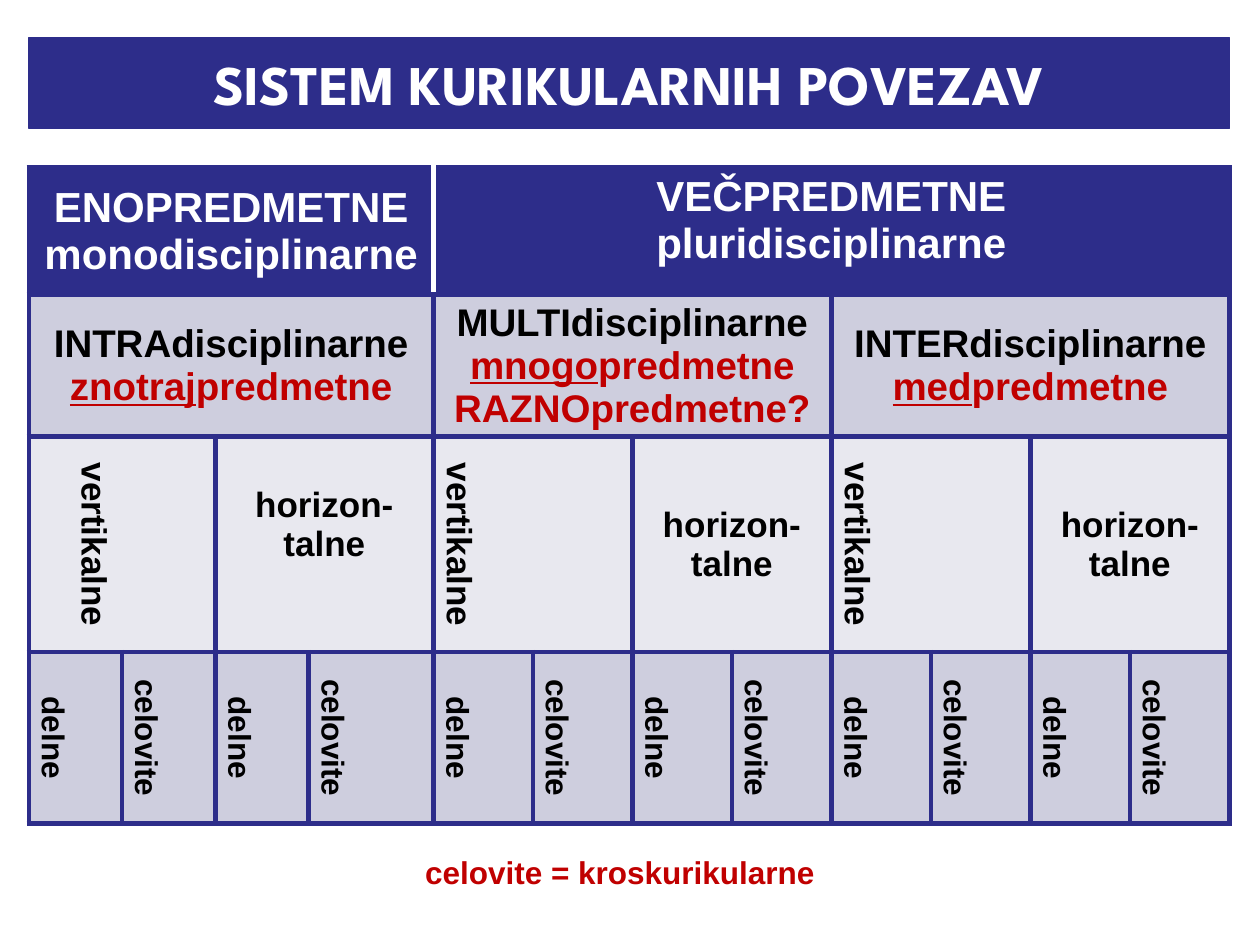
from lxml import etree
from pptx import Presentation
from pptx import util as u
from pptx.dml.color import RGBColor
from pptx.enum import text
from pptx.oxml import ns

NAVY = RGBColor(0x2D, 0x2D, 0x8A)
WHITE = RGBColor(0xFF, 0xFF, 0xFF)
BLACK = RGBColor(0, 0, 0)
RED = RGBColor(0xC0, 0, 0)
LILAC = RGBColor(0xCE, 0xCE, 0xDE)
PALE = RGBColor(0xE8, 0xE8, 0xEF)

LEFT, WIDTH = 0.23, 9.53
COLUMNS = [0.74] * 3 + [0.99] + [0.79] * 8
ROWS = [1.01, 0.57, 1.64, 1.36]
DISCIPLINES = [
    ("INTRAdisciplinarne", [("znotraj", "predmetne")]),
    ("MULTIdisciplinarne", [("mnogo", "predmetne"), ("", "RAZNOpredmetne?")]),
    ("INTERdisciplinarne", [("med", "predmetne")]),
]


def inches(*lengths):
    """Convert lengths in inches."""
    return [u.Inches(length) for length in lengths]


def add_span(para, words, size, color, font="Arial", underline=None):
    """Add a bold run to a centred paragraph."""
    para.alignment = text.PP_ALIGN.CENTER
    span = para.add_run()
    span.text = words
    span.font.name = font
    span.font.size = u.Pt(size)
    span.font.bold = True
    span.font.underline = underline
    span.font.color.rgb = color


def add_title(page, words):
    """Turn the title placeholder into a filled banner."""
    title = page.shapes.title
    title.left, title.top, title.width, title.height = inches(LEFT, 0.3, WIDTH, 0.72)
    title.fill.solid()
    title.fill.fore_color.rgb = NAVY
    title.line.color.rgb = NAVY
    title.line.width = u.Pt(0.75)
    title.text_frame.vertical_anchor = text.MSO_ANCHOR.MIDDLE
    add_span(title.text_frame.paragraphs[0], words, 32, WHITE, "League Spartan")


def add_border(cell, side, color):
    """Draw one 3 pt cell edge."""
    edge = etree.SubElement(cell._tc.get_or_add_tcPr(), ns.qn(f"a:ln{side}"), w=str(u.Pt(3)))
    fill = etree.SubElement(edge, ns.qn("a:solidFill"))
    etree.SubElement(fill, ns.qn("a:srgbClr"), val=str(color))


def add_grid(page):
    """Add the empty table with its edges and row fills."""
    frame = page.shapes.add_table(len(ROWS), len(COLUMNS), *inches(LEFT, 1.33, WIDTH, 5.21))
    table = frame.table
    table.first_row = table.horz_banding = False
    for column, width in zip(table.columns, COLUMNS):
        column.width = u.Inches(width)
    for row, height in zip(table.rows, ROWS):
        row.height = u.Inches(height)
    frame.height = u.Inches(5.21)
    for row, color in enumerate([NAVY, LILAC, PALE, LILAC]):
        for column in range(len(COLUMNS)):
            cell = table.cell(row, column)
            add_border(cell, "L", WHITE if row == 0 and column == 4 else NAVY)
            add_border(cell, "R", WHITE if row == 0 and column < 4 else NAVY)
            add_border(cell, "T", NAVY)
            add_border(cell, "B", NAVY)
            cell.fill.solid()
            cell.fill.fore_color.rgb = color
    return table


def open_cell(table, row, column, span=1):
    """Merge a cell across columns and centre it vertically."""
    cell = table.cell(row, column)
    if span > 1:
        cell.merge(table.cell(row, column + span - 1))
    cell.vertical_anchor = text.MSO_ANCHOR.MIDDLE
    return cell


def fill_cell(cell, lines, size, color, vertical=False):
    """Write plain lines into a cell, turned if vertical."""
    cell.text_frame.text = "\n".join([""] * len(lines))
    for para, line in zip(cell.text_frame.paragraphs, lines):
        add_span(para, line, size, color)
    if vertical:
        cell._tc.get_or_add_tcPr().set("vert", "vert")


def fill_discipline(cell, name, glosses):
    """Write a discipline name and its partly underlined glosses."""
    fill_cell(cell, [name], 22, BLACK)
    for prefix, stem in glosses:
        para = cell.text_frame.add_paragraph()
        if prefix:
            add_span(para, prefix, 22, RED, underline=True)
        add_span(para, stem, 22, RED, underline=False)


def fill_table(table):
    """Fill the four levels of the system."""
    fill_cell(open_cell(table, 0, 0, 4), ["ENOPREDMETNE", "monodisciplinarne"], 24, WHITE)
    plural = open_cell(table, 0, 4, 8)
    plural.vertical_anchor = text.MSO_ANCHOR.TOP
    fill_cell(plural, ["VEČPREDMETNE", "pluridisciplinarne"], 24, WHITE)
    for group, (name, glosses) in enumerate(DISCIPLINES):
        start = 4 * group
        fill_discipline(open_cell(table, 1, start, 4), name, glosses)
        fill_cell(open_cell(table, 2, start, 2), ["vertikalne"], 20, BLACK, vertical=True)
        fill_cell(open_cell(table, 2, start + 2, 2), ["horizon-talne"], 20, BLACK)
    for column in range(len(COLUMNS)):
        word = ["delne", "celovite"][column % 2]
        fill_cell(open_cell(table, 3, column), [word], 18, BLACK, vertical=True)
    for column in (0, 2):
        table.cell(2, column).margin_bottom = u.Inches(0.36)


def add_note(page, words):
    """Add the red note below the table."""
    box = page.shapes.add_textbox(*inches(2.89, 6.72, 4.06, 0.4))
    box.text_frame.word_wrap = True
    box.text_frame.auto_size = text.MSO_AUTO_SIZE.SHAPE_TO_FIT_TEXT
    add_span(box.text_frame.paragraphs[0], words, 18, RED)


def main():
    """Build and save the slide."""
    deck = Presentation()
    deck.slide_width, deck.slide_height = inches(10, 7.5)
    page = deck.slides.add_slide(deck.slide_layouts[5])
    add_title(page, "SISTEM KURIKULARNIH POVEZAV")
    fill_table(add_grid(page))
    add_note(page, "celovite = kroskurikularne")
    deck.save("out.pptx")


if __name__ == "__main__":
    main()
